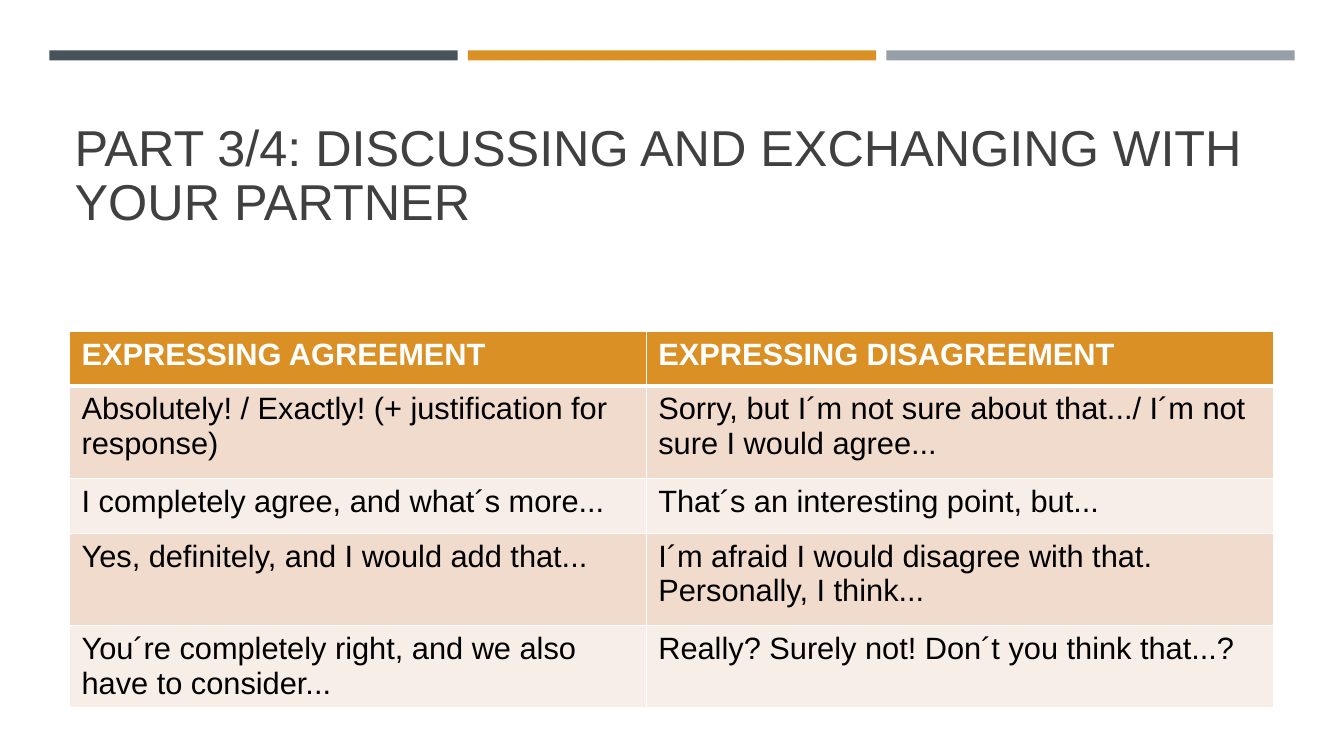
from pptx import Presentation
from pptx.dml.color import RGBColor
from pptx.enum.shapes import MSO_SHAPE as Shape
from pptx.enum.text import MSO_ANCHOR as Anchor, MSO_AUTO_SIZE as AutoSize, PP_ALIGN as Align
from pptx.oxml import parse_xml
from pptx.oxml.ns import nsdecls
from pptx.util import Inches, Pt

WIDTH, HEIGHT = 13.33, 7.5
ORANGE, WHITE = "DB9026", "FFFFFF"
BAR_COLOURS = ["465359", ORANGE, "969FA7"]
BANDS = ["F1DBCD", "F8EEE8"]
COLUMN_WIDTHS = [5.72, 6.22]
ROW_HEIGHTS = [0.54, 0.92, 0.54, 0.92, 0.81]
PHRASES = [
    ("EXPRESSING AGREEMENT", "EXPRESSING DISAGREEMENT"),
    ("Absolutely! / Exactly! (+ justification for response)",
     "Sorry, but I´m not sure about that.../ I´m not sure I would agree..."),
    ("I completely agree, and what´s more...", "That´s an interesting point, but..."),
    ("Yes, definitely, and I would add that...",
     "I´m afraid I would disagree with that. Personally, I think..."),
    ("You´re completely right, and we also have to consider...",
     "Really? Surely not! Don´t you think that...?"),
]


def colour(hex_text):
    return RGBColor.from_string(hex_text)


def apply(target, formats):
    for name, value in formats.items():
        setattr(target, name, value)


def write(para, text, size, hex_text, bold=False):
    span = para.add_run()
    span.text = text
    apply(span.font, {"name": "Arial", "size": Pt(size), "bold": bold})
    span.font.color.rgb = colour(hex_text)


def add_bars(page):
    length, step = 4.05, 4.15
    for index, hex_text in enumerate(BAR_COLOURS):
        bar = page.shapes.add_shape(Shape.RECTANGLE, Inches(0.49 + index * step),
                                    Inches(0.5), Inches(length), Inches(0.1))
        bar.shadow.inherit = False
        bar.fill.solid()
        bar.fill.fore_color.rgb = colour(hex_text)
        bar.line.fill.background()


def add_title(page, text):
    title = page.shapes.title
    apply(title, {"left": Inches(0.64), "top": Inches(0.79),
                  "width": Inches(12.02), "height": Inches(1.56)})
    apply(title.text_frame, {"vertical_anchor": Anchor.BOTTOM, "word_wrap": True,
                             "auto_size": AutoSize.NONE})
    para = title.text_frame.paragraphs[0]
    apply(para, {"alignment": Align.LEFT, "line_spacing": 0.9})
    write(para, text, 36, "404040")


def add_borders(cell, widths):
    properties = cell._tc.get_or_add_tcPr()
    for index, (side, points) in enumerate(widths.items()):
        properties.insert(index, parse_xml(
            f'<a:ln{side} {nsdecls("a")} w="{Pt(points)}"><a:solidFill>'
            f'<a:srgbClr val="{WHITE}"/></a:solidFill></a:ln{side}>'))


def fill_cell(cell, text, row):
    header = row == 0
    apply(cell, {"margin_left": Inches(0.12), "margin_right": Inches(0.12),
                 "margin_top": Inches(0.06), "margin_bottom": Inches(0.06)})
    cell.fill.solid()
    cell.fill.fore_color.rgb = colour(ORANGE if header else BANDS[(row - 1) % 2])
    write(cell.text_frame.paragraphs[0], text, 22, WHITE if header else "000000", header)
    add_borders(cell, {"L": 1, "R": 1, "T": 3 if row == 1 else 1, "B": 3 if header else 1})


def add_phrase_table(page):
    table = page.shapes.add_table(
        len(PHRASES), len(COLUMN_WIDTHS), Inches(0.69), Inches(3.29),
        Inches(sum(COLUMN_WIDTHS)), Inches(sum(ROW_HEIGHTS))).table
    for column, width in zip(table.columns, COLUMN_WIDTHS):
        column.width = Inches(width)
    for row, (height, texts) in enumerate(zip(ROW_HEIGHTS, PHRASES)):
        table.rows[row].height = Inches(height)
        for column, text in enumerate(texts):
            fill_cell(table.cell(row, column), text, row)


def main():
    deck = Presentation()
    apply(deck, {"slide_width": Inches(WIDTH), "slide_height": Inches(HEIGHT)})
    page = deck.slides.add_slide(deck.slide_layouts[5])
    page.background.fill.solid()
    page.background.fill.fore_color.rgb = colour(WHITE)

    # Heading with the three-colour strip
    add_title(page, "PART 3/4: DISCUSSING AND EXCHANGING WITH YOUR PARTNER")
    add_bars(page)

    # Useful phrases
    add_phrase_table(page)
    deck.save("out.pptx")


if __name__ == "__main__":
    main()
